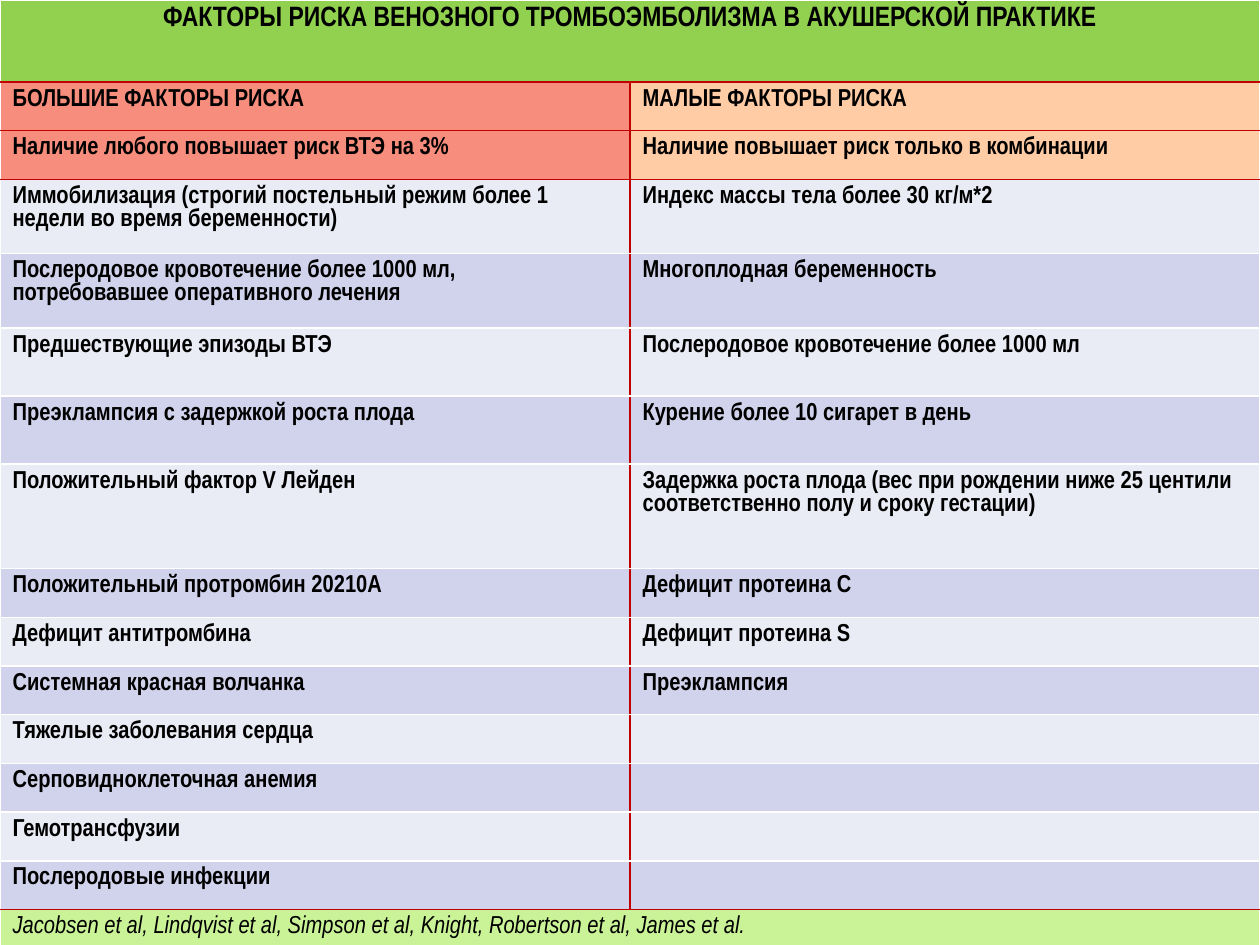
from lxml import etree
from pptx import Presentation
from pptx.dml.color import RGBColor
from pptx.enum.text import PP_ALIGN
from pptx.oxml.ns import qn
from pptx.util import Inches, Pt

CENTER, LEFT = PP_ALIGN.CENTER, PP_ALIGN.LEFT

BLACK = RGBColor(0x00, 0x00, 0x00)
WHITE = RGBColor(0xFF, 0xFF, 0xFF)
RED = RGBColor(0xC0, 0x00, 0x00)
GREEN = RGBColor(0x92, 0xD0, 0x50)
LIGHT_GREEN = RGBColor(0xCA, 0xF2, 0x97)
SALMON = RGBColor(0xF7, 0x8D, 0x7C)
PEACH = RGBColor(0xFF, 0xCC, 0xA6)
BANDS = (RGBColor(0xE9, 0xEB, 0xF5), RGBColor(0xD0, 0xD3, 0xEB))

# Content
TITLE = "ФАКТОРЫ РИСКА ВЕНОЗНОГО ТРОМБОЭМБОЛИЗМА В АКУШЕРСКОЙ ПРАКТИКЕ"
HEADINGS = [
    ("БОЛЬШИЕ ФАКТОРЫ РИСКА", "МАЛЫЕ ФАКТОРЫ РИСКА"),
    ("Наличие любого повышает риск ВТЭ на 3%",
     "Наличие повышает риск только в комбинации"),
]
FACTORS = [
    ("Иммобилизация (строгий постельный режим более 1 недели во время беременности)",
     "Индекс массы тела более 30 кг/м*2"),
    ("Послеродовое кровотечение более 1000 мл, потребовавшее оперативного лечения",
     "Многоплодная беременность"),
    ("Предшествующие эпизоды ВТЭ", "Послеродовое кровотечение более 1000 мл"),
    ("Преэклампсия с задержкой роста плода", "Курение более 10 сигарет в день"),
    ("Положительный фактор V Лейден",
     "Задержка роста плода (вес при рождении ниже 25 центили "
     "соответственно полу и сроку гестации)"),
    ("Положительный протромбин 20210А", "Дефицит протеина С"),
    ("Дефицит антитромбина", "Дефицит протеина S"),
    ("Системная красная волчанка", "Преэклампсия"),
    ("Тяжелые заболевания сердца", ""),
    ("Серповидноклеточная анемия", ""),
    ("Гемотрансфузии", ""),
    ("Послеродовые инфекции", ""),
]
SOURCES = ("Jacobsen et al, Lindqvist et al, Simpson et al, Knight, "
           "Robertson et al, James et al.")

# Layout: tall rows are fixed, the others share the remaining height
ROWS = [(TITLE, "")] + HEADINGS + FACTORS + [(SOURCES, "")]
FIRST_FACTOR = 1 + len(HEADINGS)
LAST = len(ROWS) - 1
TABLE_HEIGHT = 7.61
TALL_ROWS = {0: 0.65, 3: 0.59, 4: 0.59, 5: 0.54, 6: 0.54, 7: 0.83}
SINGLE_ROW = (TABLE_HEIGHT - sum(TALL_ROWS.values())) / (len(ROWS) - len(TALL_ROWS))
RED_BELOW = {0, 1, 2, LAST - 1}


def fill_color(row, col):
    if row == 0:
        return GREEN
    if row == LAST:
        return LIGHT_GREEN
    if row < FIRST_FACTOR:
        return (SALMON, PEACH)[col]
    return BANDS[(row - FIRST_FACTOR) % 2]


def border_colors(row, col):
    divided = 0 < row < LAST
    return {
        "a:lnL": RED if divided and col == 1 else WHITE,
        "a:lnR": RED if divided and col == 0 else WHITE,
        "a:lnT": RED if row - 1 in RED_BELOW else WHITE,
        "a:lnB": RED if row in RED_BELOW else WHITE,
    }


def set_borders(cell, colors):
    properties = cell._tc.get_or_add_tcPr()
    for position, (side, color) in enumerate(colors.items()):
        line = etree.Element(qn(side), w=str(Pt(1)))
        solid = etree.SubElement(line, qn("a:solidFill"))
        etree.SubElement(solid, qn("a:srgbClr"), val=str(color))
        properties.insert(position, line)


def write_text(cell, text, row):
    paragraph = cell.text_frame.paragraphs[0]
    paragraph.text = text
    paragraph.alignment = CENTER if row == 0 else LEFT
    font = paragraph.font
    if paragraph.runs:
        font = paragraph.runs[0].font
    font.name = "Arial Narrow"
    font.size = Pt(16 if row == 0 else 14)
    font.bold = row != LAST
    font.italic = row == LAST
    font.color.rgb = BLACK


presentation = Presentation()
presentation.slide_width = Inches(10)
presentation.slide_height = Inches(7.5)
slide = presentation.slides.add_slide(presentation.slide_layouts[6])
slide.background.fill.solid()
slide.background.fill.fore_color.rgb = BLACK

# Risk factor table
risk_table = slide.shapes.add_table(
    len(ROWS), 2, 0, 0, Inches(10), Inches(TABLE_HEIGHT)).table
for column in risk_table.columns:
    column.width = Inches(5)

for row, texts in enumerate(ROWS):
    risk_table.rows[row].height = Inches(TALL_ROWS.get(row, SINGLE_ROW))
    for col, text in enumerate(texts):
        cell = risk_table.cell(row, col)
        cell.fill.solid()
        cell.fill.fore_color.rgb = fill_color(row, col)
        set_borders(cell, border_colors(row, col))
        write_text(cell, text, row)

# Title and sources span both columns
for row in (0, LAST):
    risk_table.cell(row, 0).merge(risk_table.cell(row, 1))

presentation.save("out.pptx")
